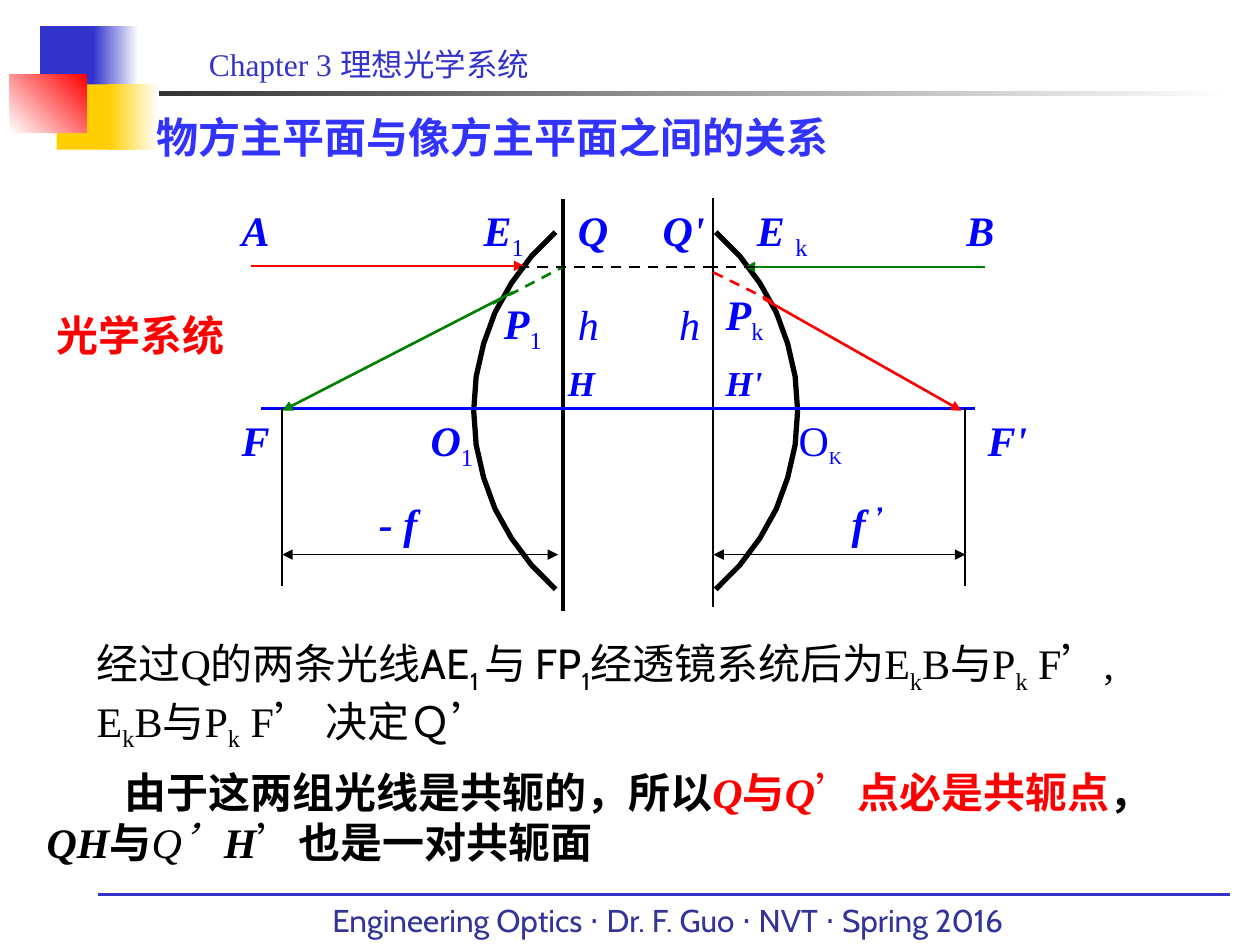
from dataclasses import dataclass

from lxml import etree
from pptx import Presentation, util as u
from pptx.dml.color import RGBColor
from pptx.enum import dml, shapes, text
from pptx.oxml import ns


@dataclass(frozen=True)
class Theme:
    navy: str = "3333CC"
    foot: str = "333399"
    title: str = "3333FF"
    blue: str = "0000FF"
    red: str = "FF0000"
    green: str = "008000"
    gold: str = "FFCF01"
    dark: str = "1C1C1C"
    black: str = "000000"
    white: str = "FFFFFF"
    serif: str = "Times New Roman"
    sans: str = "Cabin"
    big: int = 24
    mid: int = 20
    small: int = 18


T = Theme()
rgb = RGBColor.from_string
prs = Presentation()
prs.slide_width, prs.slide_height = u.Cm(25.4), u.Cm(19.05)
slide = prs.slides.add_slide(prs.slide_layouts[6])


def write(x, y, w, h, runs, tint=T.blue, size=T.big, anchor="TOP", indent=0):
    """Runs are (words, flags[, tint[, size]]); flags: b bold, i italic, s sub, c sans."""
    box = slide.shapes.add_textbox(u.Cm(x), u.Cm(y), u.Cm(w), u.Cm(h))
    frame = box.text_frame
    frame.word_wrap = True
    frame.vertical_anchor = text.MSO_ANCHOR[anchor]
    para = frame.paragraphs[0]
    if indent:
        para._p.get_or_add_pPr().set("indent", str(u.Cm(indent)))
    for words, flags, *rest in runs:
        run = para.add_run()
        run.text = words
        font = run.font
        font.name = T.sans if "c" in flags else T.serif
        font.size = u.Pt(rest[1] if len(rest) > 1 else size)
        font.color.rgb = rgb(rest[0] if rest else tint)
        font.bold, font.italic = "b" in flags, "i" in flags
        if "s" in flags:
            run._r.get_or_add_rPr().set("baseline", "-25000")


def draw(x1, y1, x2, y2, tint=T.black, width=1.5, dash=False, ends=""):
    """Straight line; ends names the arrowheads: head, tail or both."""
    line = slide.shapes.add_connector(
        shapes.MSO_CONNECTOR.STRAIGHT, u.Cm(x1), u.Cm(y1), u.Cm(x2), u.Cm(y2))
    line.line.color.rgb = rgb(tint)
    line.line.width = u.Pt(width)
    if dash:
        line.line.dash_style = dml.MSO_LINE.DASH
    for end in ends.split():
        etree.SubElement(line.line._get_or_add_ln(), ns.qn(f"a:{end}End"), type="triangle")
    etree.SubElement(line._element.spPr, ns.qn("a:effectLst"))


# Header bar and coloured squares: left, top, width, height, colours, angle
for x, y, w, h, tints, angle in [
    (0.69, 1.83, 24.16, 0.1, (T.dark, T.white), 0),
    (0.81, 0.53, 1.22, 1.32, (T.navy,), 0),
    (1.88, 0.53, 0.91, 1.32, (T.navy, T.white), 0),
    (1.14, 1.7, 1.17, 1.32, (T.gold,), 0),
    (2.18, 1.7, 1.02, 1.32, (T.gold, T.white), 0),
    (0.2, 1.5, 1.55, 1.17, (T.white, T.red), 45),
]:
    tile = slide.shapes.add_shape(
        shapes.MSO_SHAPE.RECTANGLE, u.Cm(x), u.Cm(y), u.Cm(w), u.Cm(h))
    tile.shadow.inherit = False
    tile.line.fill.background()
    if len(tints) == 1:
        tile.fill.solid()
        tile.fill.fore_color.rgb = rgb(tints[0])
    else:
        tile.fill.gradient()
        tile.fill.gradient_angle = angle
        for stop, tint, place in zip(tile.fill.gradient_stops, tints, (0, 1)):
            stop.color.rgb = rgb(tint)
            stop.position = place

# Chapter, title and footer
write(3.96, 0.53, 8.5, 1.27, [("Chapter 3 理想光学系统", "")], T.navy, T.small, "BOTTOM")
write(2.9, 1.6, 21.59, 1.78, [("物方主平面与像方主平面之间的关系", "bc")], T.title, anchor="BOTTOM")
draw(1.98, 18.03, 24.79, 18.03, T.navy)
write(6.45, 18.03, 19.05, 1.02,
      [("Engineering Optics ⋅ Dr. F. Guo ⋅ NVT ⋅ Spring 2016", "c")], T.foot, T.small)

# Lens surfaces: depth from the rim and height above the axis
half = [(0, 3.6), (0.48, 3.12), (0.89, 2.57), (1.22, 1.98), (1.45, 1.35), (1.6, 0.69)]
arc = [(d, -h) for d, h in half] + [(1.65, 0)] + half[::-1]
for rim, side in [(11.2, -1), (14.43, 1)]:
    dots = [(u.Cm(rim + side * d), u.Cm(8.28 + h)) for d, h in arc]
    path = slide.shapes.build_freeform(*dots[0])
    path.add_line_segments(dots[1:], close=False)
    lens = path.convert_to_shape()
    lens.shadow.inherit = False
    lens.fill.background()
    lens.line.color.rgb = rgb(T.black)
    lens.line.width = u.Pt(3)

# Principal planes, axis and focal lengths
axis, ray, left, right = 8.23, 5.38, 11.35, 14.38
draw(left, 4.01, left, 12.32, width=0)
draw(right, 3.99, right, 12.24, width=1)
draw(5.26, axis, 19.66, axis, T.blue)
for focus, start, stop in [(5.69, 5.69, 11.25), (19.46, right, 19.46)]:
    draw(focus, axis, focus, 11.81, width=1)
    draw(start, 11.18, stop, 11.18, width=1, ends="head tail")

# Rays
draw(9.93, 6.12, left, ray, T.green, dash=True)
draw(10.34, 5.89, 5.69, 8.28, T.green, ends="tail")
draw(19.86, ray, 15.01, ray, T.green, ends="tail")
draw(15.21, ray, 14.15, ray, dash=True)
draw(15.39, 6.02, 19.38, 8.28, T.red, ends="tail")
draw(right, 5.49, 15.65, 6.12, T.red, dash=True)
draw(5.05, 5.36, 10.57, 5.36, T.red, ends="tail")
draw(right, ray, 10.34, ray, dash=True)

# Point labels
write(0.89, 6.12, 4.45, 1.27, [("光学系统", "b")], T.red)
for x, y, *runs in [
    (4.62, 3.99, ("A", "bi")),
    (9.5, 3.99, ("E", "bi"), ("1", "s")),
    (11.4, 3.99, ("Q", "bi")),
    (13.11, 3.99, ("Q'", "bi")),
    (15.01, 3.99, ("E ", "bi"), ("k", "s")),
    (19.23, 3.99, ("B", "bi")),
    (9.91, 5.87, ("P", "bi"), ("1", "s")),
    (14.38, 5.69, ("P", "bi"), ("k", "s")),
    (11.4, 5.89, ("h", "i")),
    (13.44, 5.89, ("h", "i")),
    (11.2, 7.16, ("H", "bi", T.blue, T.mid)),
    (14.38, 7.16, ("H'", "bi", T.blue, T.mid)),
    (4.62, axis, ("F", "bi")),
    (8.43, axis, ("O", "bi"), ("1", "s")),
    (15.85, axis, ("O", ""), ("K", "s", T.blue, T.small)),
    (19.66, axis, ("F'", "bi")),
    (7.39, 9.91, ("- f", "bi")),
    (16.92, 9.91, ("f ", "bi"), ("’", "c")),
]:
    write(x, y, 1.7, 1.27, runs)

# Explanation
write(1.7, 12.73, 22.4, 2.29, [
    ("经过", "c"), ("Q", ""), ("的两条光线AE", "c"), ("1 ", "cs"), ("与 FP", "c"),
    ("1", "cs"), ("经透镜系统后为", "c"), ("E", ""), ("k", "s"), ("B与P", ""),
    ("k", "s"), (" F’, E", ""), ("k", "s"), ("B与P", ""), ("k", "s"),
    (" F’ 决定Ｑ’", ""),
], T.black)
write(0.69, 15.32, 23.9, 2.29, [
    ("由于这两组光线是共轭的，所以", "b"), ("Q", "bi", T.red), ("与", "b", T.red),
    ("Q", "bi", T.red), ("’", "c", T.red), ("点必是共轭点", "b", T.red), ("，", "b"),
    ("QH", "bi"), ("与", "b"), ("Q", "i"), ("’", "ci"), ("H", "bi"), ("’", "c"),
    ("也是一对共轭面", "b"),
], T.black, indent=1.57)

prs.save("out.pptx")
